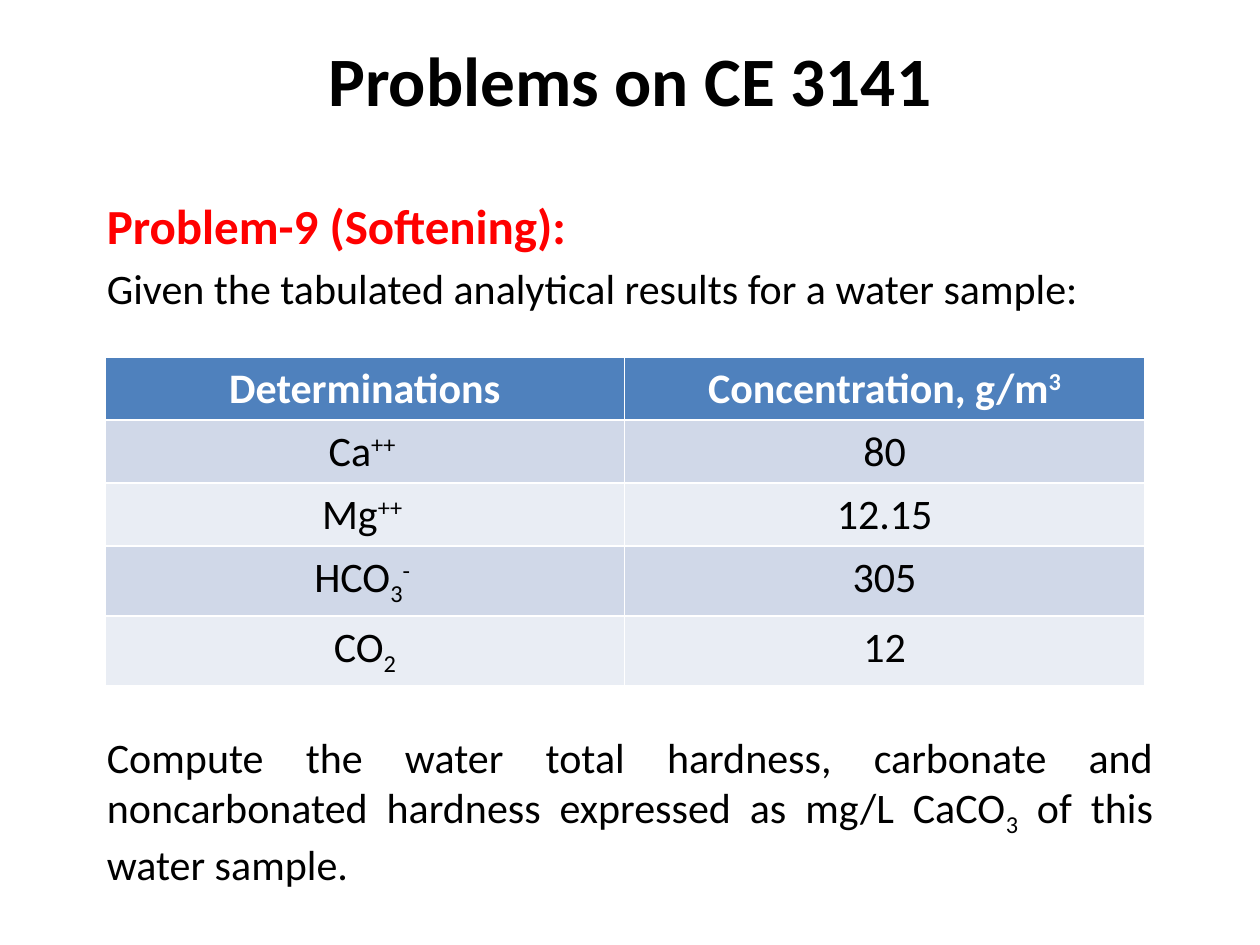
from pptx import Presentation
from pptx.dml.color import RGBColor
from pptx.enum.text import MSO_ANCHOR, PP_ALIGN
from pptx.util import Pt

SUBSCRIPT, SUPERSCRIPT = -25000, 30000


def rgb(value):
    return RGBColor.from_string(value)


def write(paragraph, pieces, align, size=24, color="000000", bold=False):
    """Fill a paragraph with pieces: plain strings or (string, baseline) pairs."""
    paragraph.alignment = align
    for piece in pieces:
        text, baseline = (piece, None) if isinstance(piece, str) else piece
        run = paragraph.add_run()
        run.text = text
        for name, value in {"name": "Calibri", "size": Pt(size), "bold": bold}.items():
            setattr(run.font, name, value)
        run.font.color.rgb = rgb(color)
        if baseline:
            run._r.get_or_add_rPr().set("baseline", str(baseline))


prs = Presentation()
prs.slide_width, prs.slide_height = Pt(720), Pt(540)
slide = prs.slides.add_slide(prs.slide_layouts[5])

# Title
title = slide.shapes.title
title.left, title.top, title.width, title.height = Pt(54), Pt(18), Pt(612), Pt(54)
title.text_frame.vertical_anchor = MSO_ANCHOR.MIDDLE
write(title.text_frame.paragraphs[0], ["Problems on CE 3141"], PP_ALIGN.CENTER, 39.6, bold=True)

# Problem statement; the space before the last paragraph makes room for the table
statement = slide.shapes.add_textbox(Pt(54), Pt(108), Pt(612), Pt(384)).text_frame
statement.word_wrap = True
lines = [
    (["Problem-9 (Softening):"], 5.6, {"size": 28, "color": "FF0000", "bold": True}),
    (["Given the tabulated analytical results for a water sample:"], 4.8, {}),
    (["Compute the water total hardness, carbonate and noncarbonated hardness "
      "expressed as mg/L CaCO", ("3", SUBSCRIPT), " of this water sample."], 239, {}),
]
for index, (pieces, space_before, style) in enumerate(lines):
    paragraph = statement.add_paragraph() if index else statement.paragraphs[0]
    paragraph.space_before = Pt(space_before)
    write(paragraph, pieces, PP_ALIGN.JUSTIFY, **style)

# Analytical results
results = [
    (["Determinations"], ["Concentration, g/m", ("3", SUPERSCRIPT)]),
    (["Ca", ("++ ", SUPERSCRIPT)], ["80"]),
    (["Mg", ("++ ", SUPERSCRIPT)], ["12.15"]),
    (["HCO", ("3", SUBSCRIPT), ("- ", SUPERSCRIPT)], ["305"]),
    (["CO", ("2", SUBSCRIPT)], ["12"]),
]
row_heights = [36, 36, 36, 39.6, 39.6]
table = slide.shapes.add_table(
    len(results), 2, Pt(60), Pt(204), Pt(594), Pt(sum(row_heights))).table
for row, (determination, height) in enumerate(zip(results, row_heights)):
    table.rows[row].height = Pt(height)
    header = row == 0
    fill = "4F81BD" if header else ("E9EDF4", "D0D8E8")[row % 2]
    for column, pieces in enumerate(determination):
        cell = table.cell(row, column)
        cell.fill.solid()
        cell.fill.fore_color.rgb = rgb(fill)
        write(cell.text_frame.paragraphs[0], pieces, PP_ALIGN.CENTER,
              color="FFFFFF" if header else "000000", bold=header)

prs.save("out.pptx")
